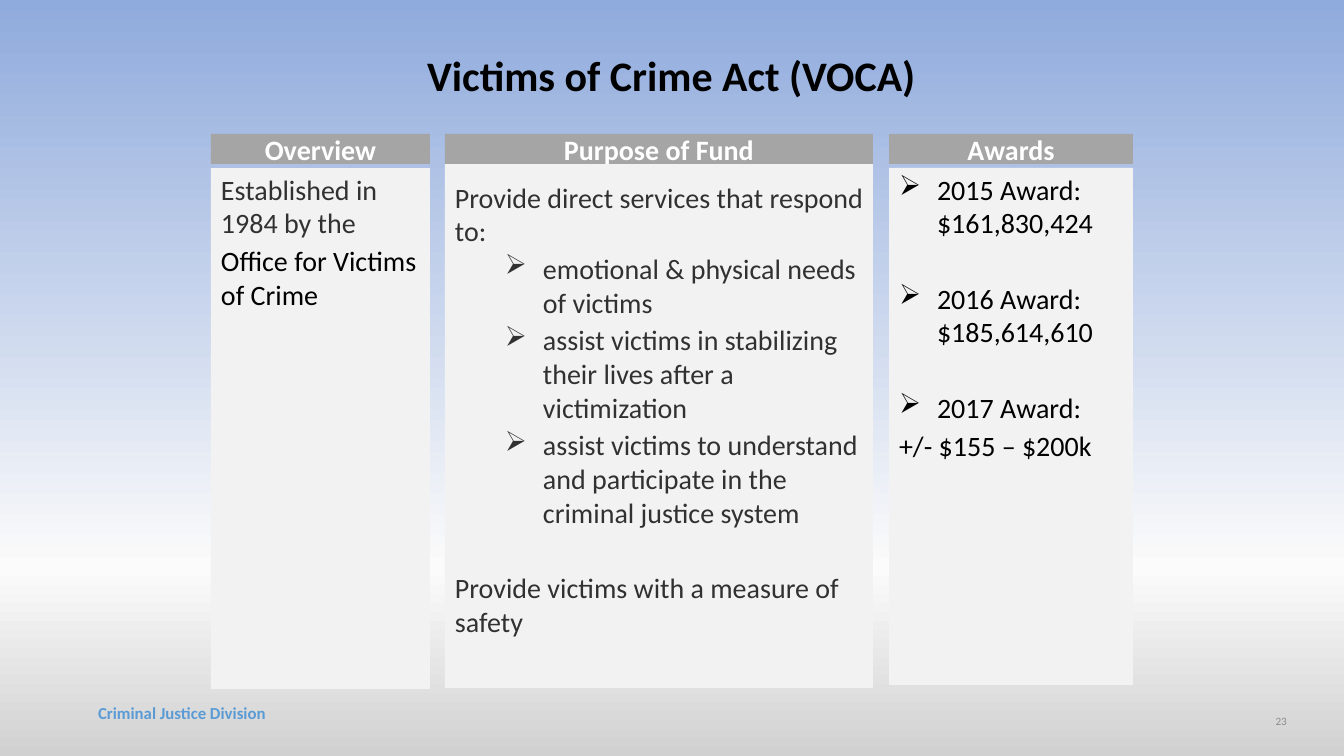
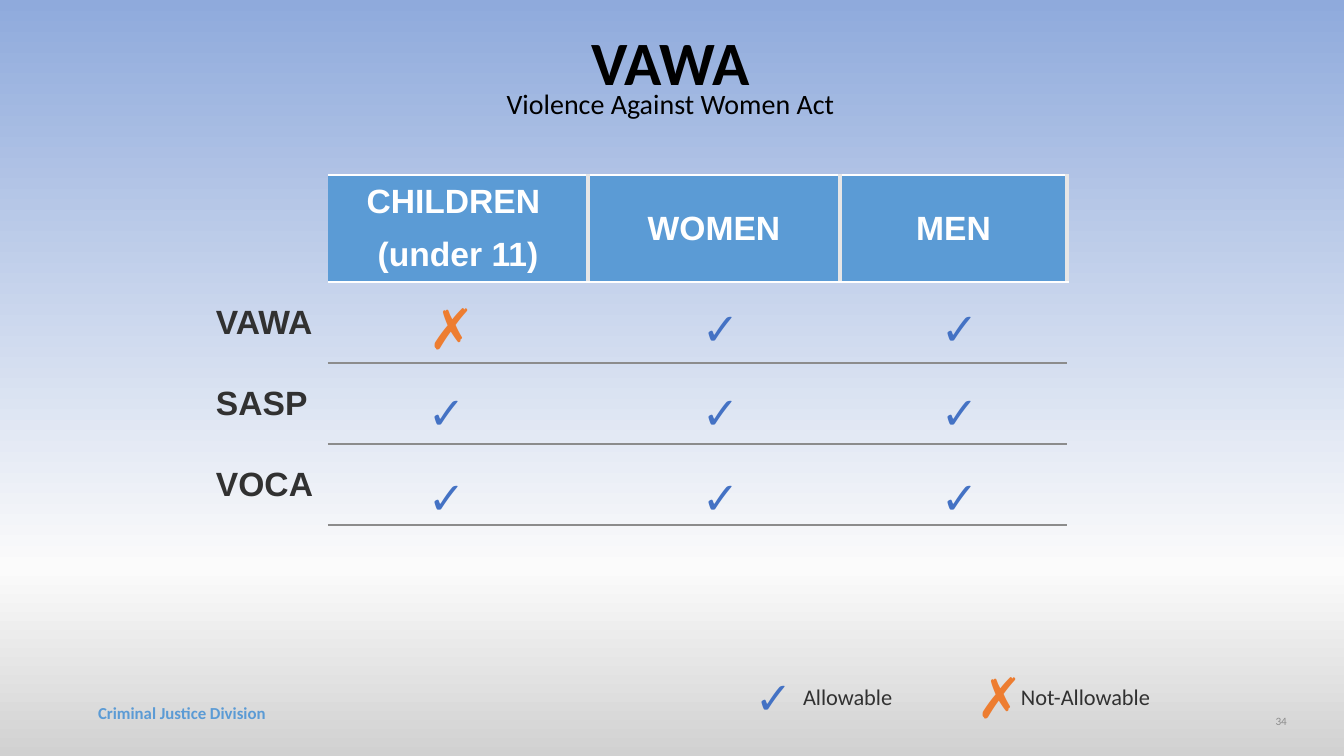
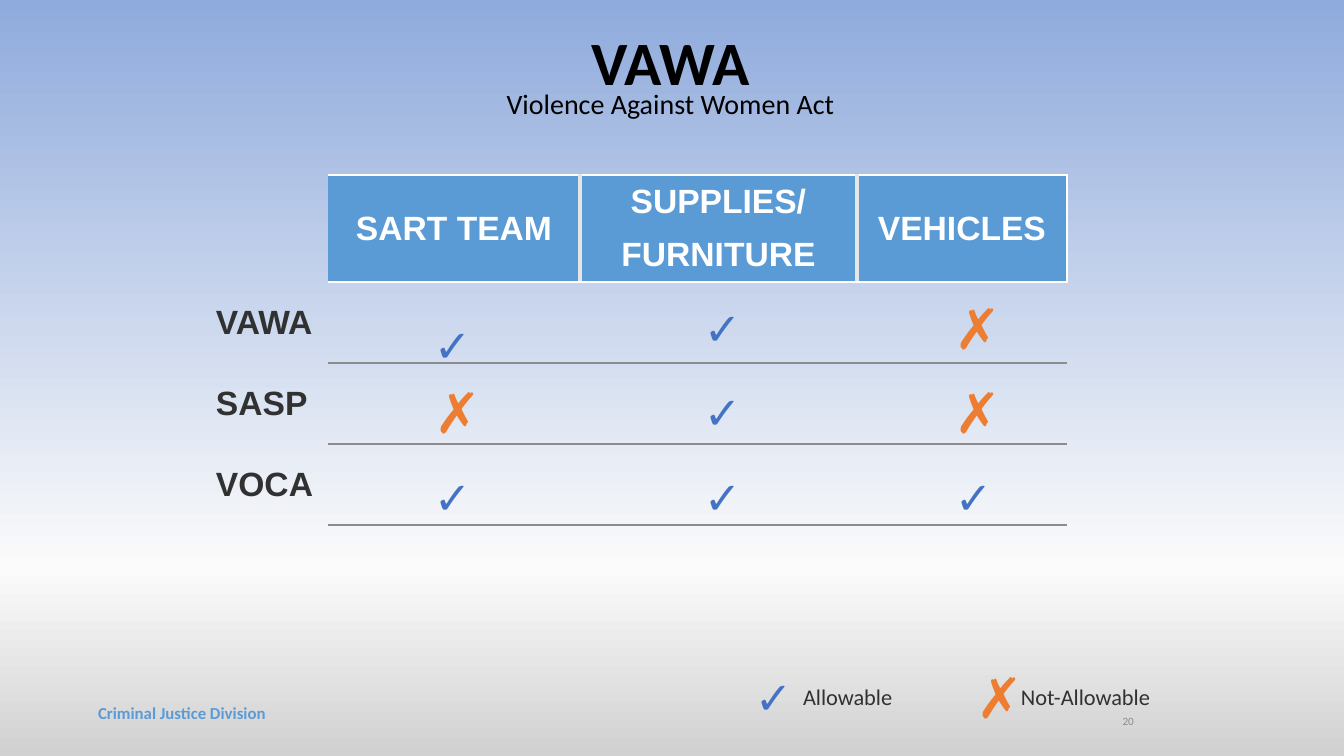
import copy

import pptx
import pptx.dml.color
import pptx.enum.shapes
import pptx.enum.text
import pptx.oxml.ns
import pptx.util
from lxml import etree

PX = 9072  # EMU in one px of a 1344 x 756 slide


class Theme:
    sans, grid = "Calibri", "Arial"
    sky = ((0, "8FAADC"), (0.75, "FBFBFB"), (1, "D1D1D1"))
    black, white, ink = "000000", "FFFFFF", "313131"
    grey, band, panel, edge = "8C8C8C", "A5A5A5", "F2F2F2", "E7E6E6"
    blue, tick, cross = "5B9BD5", "4472C4", "ED7D31"
    title, act, body, head = 30, 44, 20, 24
    label, foot, page = 16, 12, 8


ALIGN = pptx.enum.text.PP_ALIGN
ANCHOR = pptx.enum.text.MSO_ANCHOR
FIT = pptx.enum.text.MSO_AUTO_SIZE
RGB = pptx.dml.color.RGBColor.from_string
qn = pptx.oxml.ns.qn


def write(par, text, size, color, bold=False, font=Theme.sans):
    run = par.add_run()
    run.text = text
    run.font.size = pptx.util.Pt(size)
    run.font.name = font
    run.font.bold = bold
    run.font.color.rgb = RGB(color)


def frame(shape, insets=(0, 0, 0, 0), anchor=ANCHOR.TOP, wrap=True, fit=FIT.NONE):
    text = shape.text_frame
    text.margin_left, text.margin_top, text.margin_right, text.margin_bottom = [
        v * PX for v in insets]
    text.vertical_anchor = anchor
    text.word_wrap = wrap
    text.auto_size = fit
    return text


deck = pptx.Presentation()
deck.slide_width, deck.slide_height = 1344 * PX, 756 * PX

# Master background
master = deck.slide_master
fill = master.background.fill
fill.gradient()
fill.gradient_angle = 270
stops = master.element.find(".//" + qn("a:gsLst"))
stops.append(copy.deepcopy(stops[-1]))
for stop, (place, color) in zip(fill.gradient_stops, Theme.sky):
    stop.position = place
    stop.color.rgb = RGB(color)

# Slides with titles and page numbers
wide = (54, 32, 1233, 51)
pages = [
    (5, "Victims of Crime Act (VOCA)", Theme.title, (209, 55, 925, 80), "23", 1287),
    (1, "VAWA", Theme.act, wide, "34", 1287),
    (1, "VAWA", Theme.act, wide, "20", 1134),
]
for layout, title, size, at, number, right in pages:
    slide = deck.slides.add_slide(deck.slide_layouts[layout])
    head = slide.shapes.title
    head.left, head.top, head.width, head.height = [v * PX for v in at]
    par = frame(head).paragraphs[0]
    par.alignment = ALIGN.CENTER
    par.line_spacing = 0.9
    write(par, title, size, Theme.black, True)

    page = slide.shapes.add_textbox(*[v * PX for v in (right - 116, 707, 116, 28)])
    par = frame(page, anchor=ANCHOR.MIDDLE).paragraphs[0]
    par.alignment = ALIGN.RIGHT
    write(par, number, Theme.page, Theme.grey)

# Footer, held by the master
foot = deck.slides[0].shapes.add_textbox(*[v * PX for v in (88, 698, 616, 30)])
par = frame(foot, (10, 5, 10, 5)).paragraphs[0]
write(par, "Criminal Justice Division", Theme.foot, Theme.blue, True)
master.shapes.element.append(foot.element)

# Fund panels: head, left, width, top, height, inset, lines
# Each line: text, colour, indent, hang, space before
panels = [
    ("Overview", 211, 219, 168, 521, 4, [
        ("Established in 1984 by the", Theme.ink, 0, 0, 0),
        ("Office for Victims of Crime", Theme.black, 0, 0, 0),
    ]),
    ("Purpose of Fund", 445, 428, 164, 524, 16, [
        ("Provide direct services that respond to:", Theme.ink, 0, 0, 0),
        ("emotional & physical needs of victims", Theme.ink, 88, 38, 0),
        ("assist victims in stabilizing their lives after a victimization",
         Theme.ink, 88, 38, 0),
        ("assist victims to understand and participate in the criminal justice system",
         Theme.ink, 88, 38, 0),
        ("Provide victims with a measure of safety", Theme.ink, 0, 0, 27),
    ]),
    ("Awards", 889, 244, 168, 517, 4, [
        ("2015 Award: $161,830,424", Theme.black, 38, 38, 0),
        ("2016 Award: $185,614,610", Theme.black, 38, 38, 27),
        ("2017 Award:", Theme.black, 38, 38, 27),
        ("+/- $155 – $200k", Theme.black, 0, 0, 0),
    ]),
]
shapes = deck.slides[0].shapes
for name, left, width, top, height, inset, lines in panels:
    parts = []
    for y, tall, color in ((134, 30, Theme.band), (top, height, Theme.panel)):
        part = shapes.add_shape(pptx.enum.shapes.MSO_SHAPE.RECTANGLE,
                                *[v * PX for v in (left, y, width, tall)])
        part.shadow.inherit = False
        part.fill.solid()
        part.fill.fore_color.rgb = RGB(color)
        part.line.fill.background()
        parts.append(part)
    par = frame(parts[0], (4, 4, 4, 4), ANCHOR.MIDDLE).paragraphs[0]
    par.alignment = ALIGN.CENTER
    write(par, name, Theme.body, Theme.white, True)

    text = frame(parts[1], (10, inset, 4, 4))
    for i, (line, color, indent, hang, before) in enumerate(lines):
        par = text.add_paragraph() if i else text.paragraphs[0]
        if hang:
            props = par._p.get_or_add_pPr()
            props.set("marL", str(indent * PX))
            props.set("indent", str(-hang * PX))
            etree.SubElement(props, qn("a:buChar")).set("char", "➢")
        par.alignment = ALIGN.LEFT
        par.space_before = pptx.util.Pt(before)
        par.space_after = pptx.util.Pt(3)
        write(par, line, Theme.body, color)

# Allowance grids: heads, column widths, right edge, mark lefts, marks, drops
grids = [
    ([["CHILDREN ", "(under 11)"], ["WOMEN"], ["MEN"]], (119, 260, 252, 227),
     (Theme.edge, 3), (428, 702, 941), ("✗✓✓", "✓✓✓", "✓✓✓"), {}),
    ([["SART TEAM"], ["SUPPLIES/", "FURNITURE"], ["VEHICLES"]], (119, 252, 277, 210),
     (Theme.white, 1), (434, 704, 955), ("✓✓✗", "✗✓✗", "✓✓✓"), {(0, 0): 17}),
]
looks = {"✓": (Theme.tick, 32, 35, 54, 0), "✗": (Theme.cross, 40, 36, 67, -7)}
funds = ("VAWA", "SASP", "VOCA")
tops = (301, 385, 470)
high = (107, 81, 81, 81)

for slide, (heads, widths, edge, lefts, marks, drops) in zip(list(deck.slides)[1:], grids):
    # Subtitle
    body = slide.placeholders[1]
    body.left, body.top, body.width, body.height = [v * PX for v in (54, 85, 1233, 107)]
    par = frame(body, (10, 5, 10, 5)).paragraphs[0]
    props = par._p.get_or_add_pPr()
    props.set("marL", "0")
    props.set("indent", "0")
    etree.SubElement(props, qn("a:buNone"))
    par.alignment = ALIGN.CENTER
    par.line_spacing = 0.9
    par.space_before = pptx.util.Pt(0)
    write(par, "Violence Against Women Act", Theme.body, Theme.black)

    # Table without style
    table = slide.shapes.add_table(
        4, 4, *[v * PX for v in (209, 175, sum(widths), sum(high))]).table
    table.first_row = table.horz_banding = False
    style = table._tbl.tblPr.find(qn("a:tableStyleId"))
    style.text = "{2D5ABB26-0587-4C30-8999-92F81FD0307C}"
    for col, width in zip(table.columns, widths):
        col.width = width * PX
    for row, tall in zip(table.rows, high):
        row.height = tall * PX

    for r in range(4):
        for c in range(4):
            cell = table.cell(r, c)
            cell.vertical_anchor = ANCHOR.MIDDLE
            cell.margin_left = cell.margin_right = 7 * PX
            cell.margin_top = cell.margin_bottom = 7 * PX

            # Borders
            sides = {}
            if c and r == 0:
                sides = {"R": edge if c == 3 else (Theme.edge, 3),
                         "T": (Theme.white, 1), "B": (Theme.white, 1)}
                if c > 1:
                    sides["L"] = (Theme.edge, 3)
            elif c:
                sides = {"T": (Theme.white if r == 1 else Theme.grey, 1),
                         "B": (Theme.grey, 1)}
            props = cell._tc.get_or_add_tcPr()
            for side in "LRTB":
                line = etree.SubElement(props, qn("a:ln" + side))
                if side in sides:
                    color, weight = sides[side]
                    line.set("w", str(pptx.util.Pt(weight)))
                    paint = etree.SubElement(line, qn("a:solidFill"))
                    etree.SubElement(paint, qn("a:srgbClr")).set("val", color)
                else:
                    etree.SubElement(line, qn("a:noFill"))

            # Fill and text
            if c and r == 0:
                cell.fill.solid()
                cell.fill.fore_color.rgb = RGB(Theme.blue)
                for i, word in enumerate(heads[c - 1]):
                    text = cell.text_frame
                    par = text.add_paragraph() if i else text.paragraphs[0]
                    par.alignment = ALIGN.CENTER
                    par.space_before = pptx.util.Pt(11 if i else 0)
                    write(par, word, Theme.head, Theme.white, True, Theme.grid)
            else:
                cell.fill.background()
                if r and c == 0:
                    write(cell.text_frame.paragraphs[0], funds[r - 1],
                          Theme.head, Theme.ink, True, Theme.grid)

    # Marks and legend
    notes = [("✓", 755, 670), ("✗", 977, 670)]
    for r, row in enumerate(marks):
        for c, mark in enumerate(row):
            notes.append((mark, lefts[c], tops[r] + drops.get((r, c), 0)))
    items = []
    for mark, x, y in notes:
        color, size, width, tall, lift = looks[mark]
        items.append((mark, size, color, (x, y + lift, width, tall)))
    items.append(("Allowable", Theme.label, Theme.ink, (803, 683, 91, 27)))
    items.append(("Not-Allowable", Theme.label, Theme.ink, (1021, 683, 131, 27)))
    for label, size, color, at in items:
        box = slide.shapes.add_textbox(*[v * PX for v in at])
        text = frame(box, wrap=False, fit=FIT.SHAPE_TO_FIT_TEXT)
        write(text.paragraphs[0], label, size, color)

deck.save("out.pptx")
